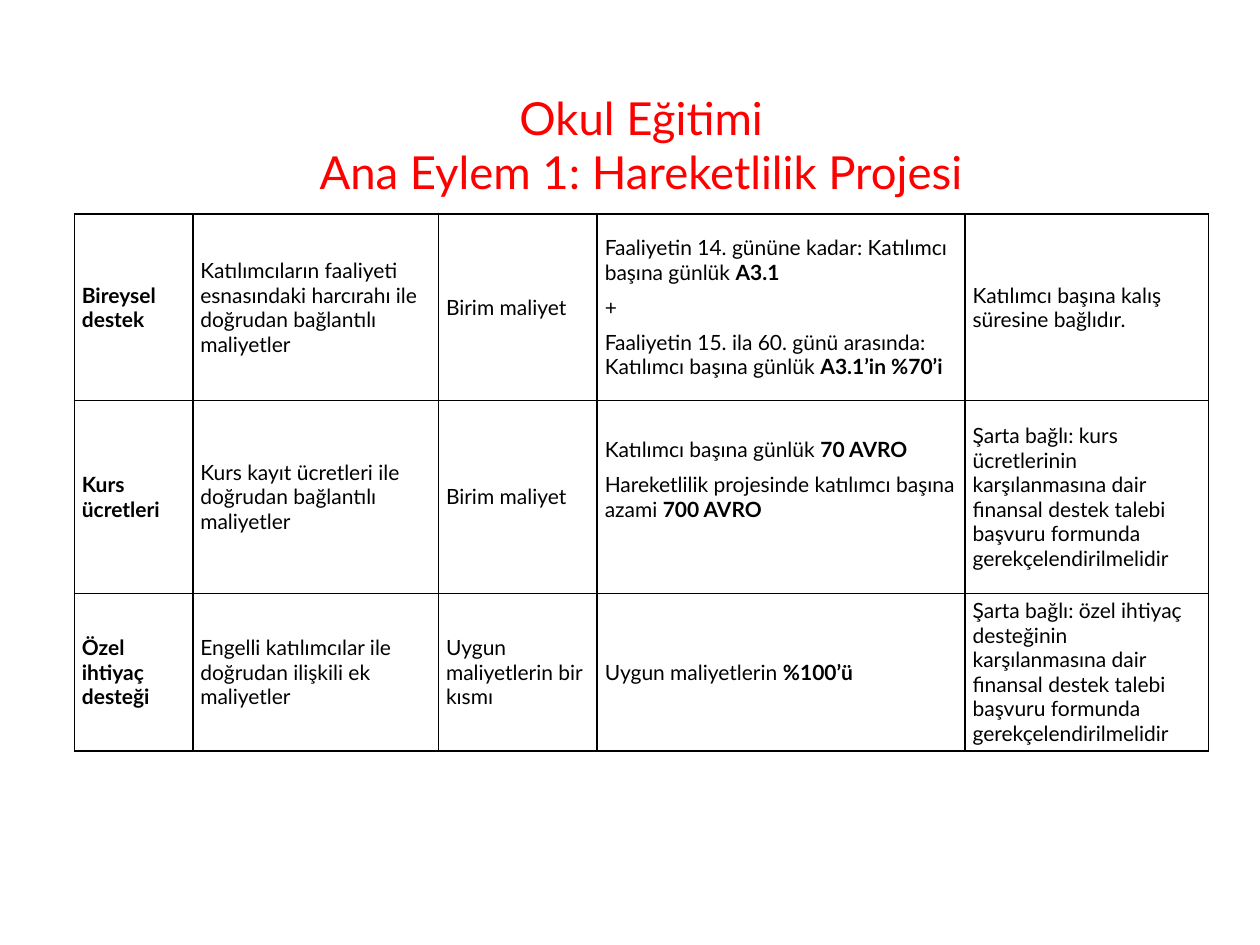
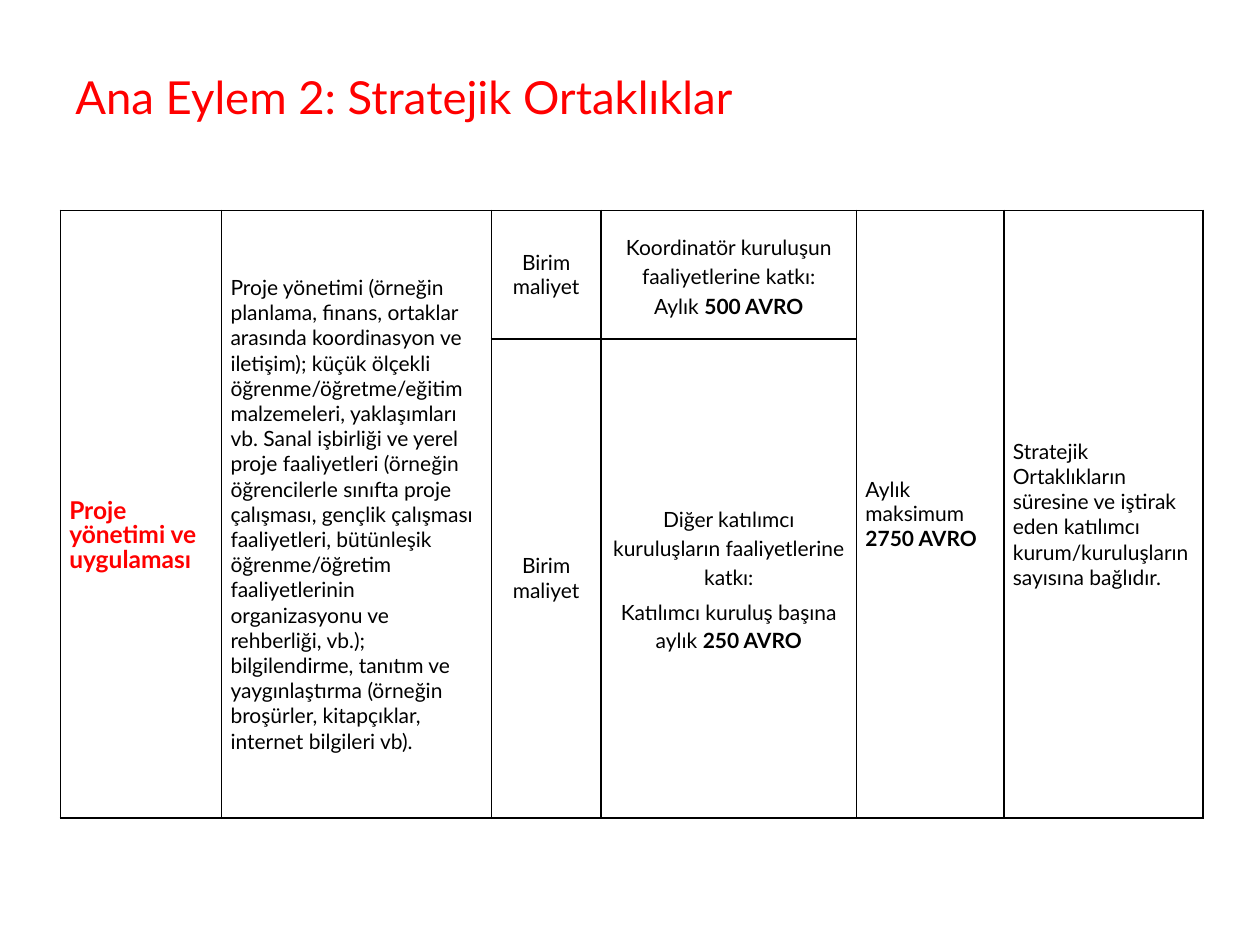
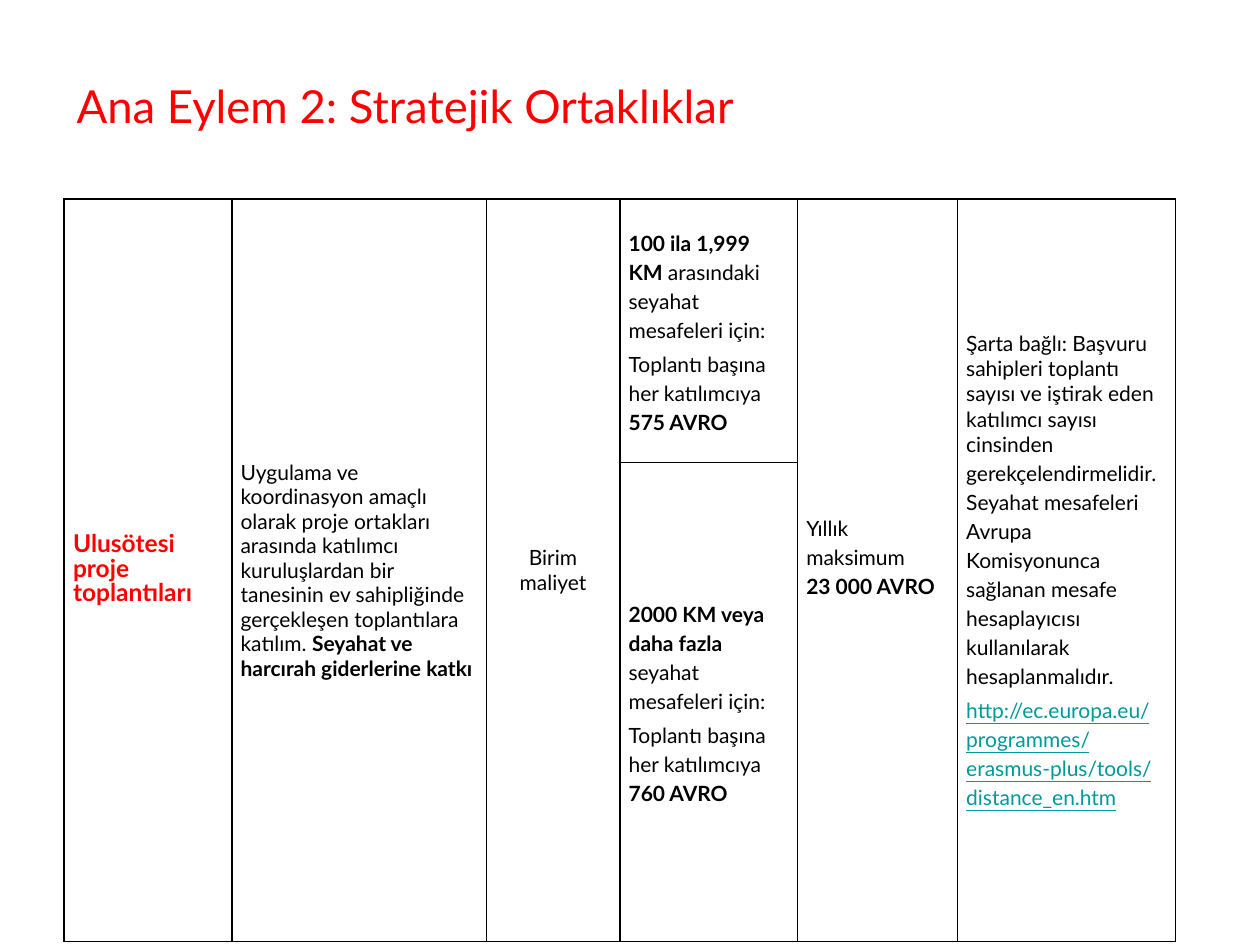
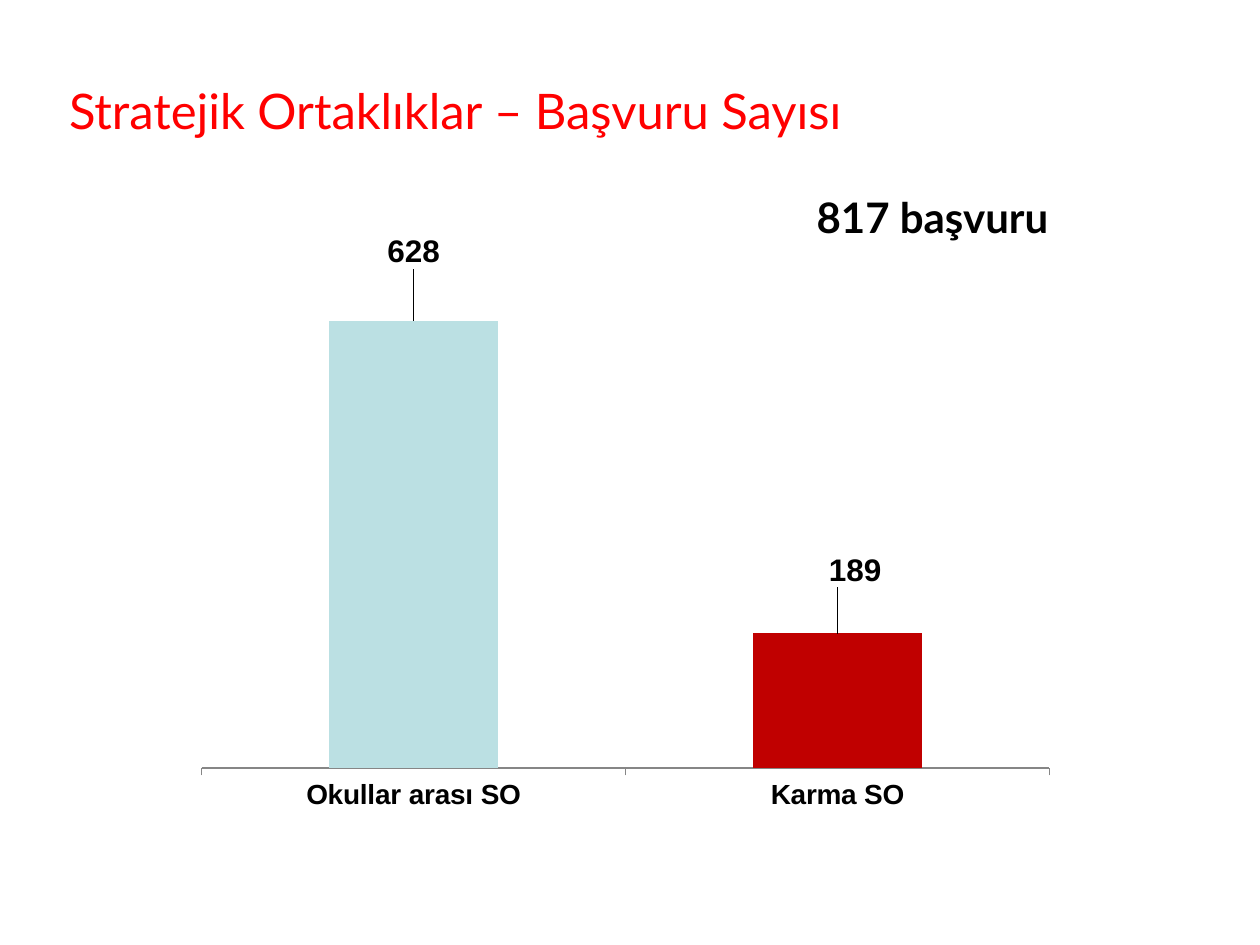
import pptx
import pptx.chart.data
import pptx.dml.color
import pptx.enum.chart
import pptx.enum.text
import pptx.oxml
import pptx.oxml.ns
import pptx.util
from dataclasses import dataclass
from typing import Any

Inches = pptx.util.Inches
Pt = pptx.util.Pt
RGB = pptx.dml.color.RGBColor
Align = pptx.enum.text.PP_ALIGN
Anchor = pptx.enum.text.MSO_ANCHOR
qn = pptx.oxml.ns.qn

# Shared look
RED = RGB(0xFF, 0x00, 0x00)
BLACK = RGB(0x00, 0x00, 0x00)
TEAL = RGB(0x00, 0x99, 0x99)
PALE = RGB(0xBB, 0xE0, 0xE3)
DARK = RGB(0xC0, 0x00, 0x00)
GRAY = RGB(0x86, 0x86, 0x86)
FONT = "Lato"
NB = chr(160)
EDGE = 1  # table line width in points
PARTNER = "Ana Eylem 2: Stratejik Ortaklıklar"


@dataclass
class Para:
    """A paragraph; the parts between asterisks are bold."""
    text: str
    space: Any = None
    after: float = 0
    align: Any = Align.LEFT
    size: float = 12
    color: Any = BLACK
    line: bool = False


@dataclass
class Cell:
    paras: list
    top: float = 0
    low: float = 0
    rows: int = 1


# Paragraph kinds
def brief(text):
    return Para(text, Pt(14), 6)


def tight(text, **more):
    return Para(text, Pt(14), 12, **more)


def loose(text, **more):
    return Para(text, 1.15, 3, **more)


def head(text):
    return tight(f"*{text}*", size=14, color=RED)


def unit():
    return tight("Birim maliyet", align=Align.CENTER)


def tall(*paras, **more):
    return Cell(list(paras), rows=2, **more)


# Text
def write(frame, paras):
    for num, item in enumerate(paras):
        para = frame.paragraphs[0] if num == 0 else frame.add_paragraph()
        para.alignment = item.align
        if item.space:
            para.line_spacing = item.space
        if item.after:
            para.space_after = Pt(item.after)
        for part, text in enumerate(item.text.split("*")):
            if not text:
                continue
            run = para.add_run()
            run.text = text
            font = run.font
            font.name = FONT
            font.size = Pt(item.size)
            font.bold = part % 2 == 1
            font.color.rgb = item.color
            if item.line:
                font.underline = True


def add_text(slide, at, paras, anchor=Anchor.TOP):
    box = slide.shapes.add_textbox(*map(Inches, at))
    frame = box.text_frame
    frame.word_wrap = True
    frame.vertical_anchor = anchor
    write(frame, paras)
    return frame


def add_title(slide, at, *lines, size=26, align=Align.LEFT):
    paras = [Para(line, size=size, color=RED, align=align) for line in lines]
    add_text(slide, at, paras, Anchor.MIDDLE)


# Tables
def add_edges(cell):
    props = cell._tc.get_or_add_tcPr()
    for side in ("lnL", "lnR", "lnT", "lnB"):
        props.append(pptx.oxml.parse_xml(
            f'<a:{side} xmlns:a="http://schemas.openxmlformats.org/drawingml/2006/main"'
            f' w="{Pt(EDGE)}"><a:solidFill><a:srgbClr val="{BLACK}"/></a:solidFill>'
            f'</a:{side}>'))


def add_grid(slide, left, top, cols, rows, cells, side):
    frame = slide.shapes.add_table(
        len(rows), len(cols), Inches(left), Inches(top),
        Inches(sum(cols)), Inches(sum(rows)))
    table = frame.table
    table.first_row = table.horz_banding = False
    for col, wide in zip(table.columns, cols):
        col.width = Inches(wide)
    for row, high in zip(table.rows, rows):
        row.height = Inches(high)
    for r, line in enumerate(cells):
        for c, item in enumerate(line):
            cell = table.cell(r, c)
            add_edges(cell)
            cell.fill.background()
            cell.vertical_anchor = Anchor.MIDDLE
            cell.margin_left = cell.margin_right = Inches(side)
            cell.margin_top = cell.margin_bottom = 0
            if item is None:
                continue
            cell.margin_top = Inches(item.top)
            cell.margin_bottom = Inches(item.low)
            write(cell.text_frame, item.paras)
            if item.rows > 1:
                cell.merge(table.cell(r + item.rows - 1, c))


# Chart
def layout(inner="", **pos):
    items = "".join(f'<c:{key} val="{val}"/>' for key, val in pos.items())
    return pptx.oxml.parse_xml(
        '<c:layout xmlns:c="http://schemas.openxmlformats.org/drawingml/2006/chart">'
        f'<c:manualLayout>{inner}{items}</c:manualLayout></c:layout>')


def add_bars(slide, at, names, vals, fills, shifts):
    data = pptx.chart.data.CategoryChartData()
    data.categories = names
    data.add_series("Series 1", vals)
    kind = pptx.enum.chart.XL_CHART_TYPE.COLUMN_CLUSTERED
    chart = slide.shapes.add_chart(kind, *map(Inches, at), data).chart
    chart.has_legend = chart.has_title = False
    chart.font.name = "Arial"
    chart.font.size = Pt(10)
    chart.font.color.rgb = BLACK

    # Axes
    axis = chart.category_axis
    axis.tick_labels.font.size = Pt(16)
    axis.tick_labels.font.bold = True
    axis.format.line.color.rgb = GRAY
    value = chart.value_axis
    value.visible = value.has_major_gridlines = False
    value.minimum_scale, value.maximum_scale = 0, 700

    # Bars and their labels
    plot = chart.plots[0]
    plot.gap_width = 150
    plot.vary_by_categories = False
    bars = plot.series[0]
    bars.format.fill.solid()
    bars.format.fill.fore_color.rgb = fills[0]
    for num, (fill, (dx, dy)) in enumerate(zip(fills, shifts)):
        point = bars.points[num]
        point.format.fill.solid()
        point.format.fill.fore_color.rgb = fill
        label = point.data_label
        label.font.size = Pt(18)
        label.font.bold = True
        label.position = pptx.enum.chart.XL_LABEL_POSITION.OUTSIDE_END
        node = bars._element.findall(".//" + qn("c:dLbl"))[num]
        node.insert(1, layout(x=dx, y=dy))

    # Plot area
    area = chart._chartSpace.find(".//" + qn("c:plotArea"))
    old = area.find(qn("c:layout"))
    if old is not None:
        area.remove(old)
    area.insert(0, layout('<c:layoutTarget val="inner"/>', xMode="edge",
                          yMode="edge", x=0.02, y=0.05, w=0.96, h=0.86))


# Slides
def add_school(slide):
    add_title(slide, (0.59, 0.52, 9, 1.25), "Okul Eğitimi",
              "Ana Eylem 1: Hareketlilik Projesi", align=Align.CENTER)
    need = ("Şarta bağlı: {} karşılanmasına dair finansal destek talebi "
            "başvuru formunda gerekçelendirilmelidir")
    texts = [
        [["*Bireysel destek*"],
         ["Katılımcıların faaliyeti esnasındaki harcırahı ile doğrudan "
          "bağlantılı maliyetler"],
         ["Birim maliyet"],
         ["Faaliyetin 14. gününe kadar: Katılımcı başına günlük *A3.1*", "+",
          "Faaliyetin 15. ila 60. günü arasında: Katılımcı başına günlük "
          "*A3.1’in %70’i*"],
         ["Katılımcı başına kalış süresine bağlıdır."]],
        [["*Kurs ücretleri*"],
         ["Kurs kayıt ücretleri ile doğrudan bağlantılı maliyetler"],
         ["Birim maliyet"],
         ["Katılımcı başına günlük *70 AVRO*",
          "Hareketlilik projesinde katılımcı başına azami *700 AVRO*"],
         [need.format("kurs ücretlerinin")]],
        [["*Özel ihtiyaç desteği*"],
         ["Engelli katılımcılar ile doğrudan ilişkili ek maliyetler"],
         ["Uygun maliyetlerin bir kısmı"],
         ["Uygun maliyetlerin *%100’ü*"],
         [need.format("özel ihtiyaç desteğinin")]],
    ]
    cells = [[Cell([brief(text) for text in item]) for item in row]
             for row in texts]
    cells[1][3].low = 0.28  # lifts the course fees
    add_grid(slide, 0.59, 1.7, [0.94, 1.95, 1.26, 2.92, 1.93],
             [1.48, 1.53, 1.25], cells, 0.06)


def add_project(slide):
    mid = Align.CENTER
    cells = [
        [tall(head("Proje yönetimi ve uygulaması"), top=0.36),
         tall(Para(
             "Proje yönetimi (örneğin planlama, finans, ortaklar arasında "
             "koordinasyon ve iletişim); küçük ölçekli öğrenme/öğretme/eğitim "
             "malzemeleri, yaklaşımları vb. Sanal işbirliği ve yerel proje "
             "faaliyetleri (örneğin öğrencilerle sınıfta proje çalışması, "
             "gençlik çalışması faaliyetleri, bütünleşik öğrenme/öğretim "
             "faaliyetlerinin organizasyonu ve rehberliği, vb.); "
             "bilgilendirme, tanıtım ve yaygınlaştırma (örneğin broşürler, "
             "kitapçıklar, internet bilgileri vb).")),
         Cell([unit()]),
         Cell([loose("Koordinatör kuruluşun faaliyetlerine katkı:", align=mid),
               tight("Aylık *500 AVRO*", align=mid)]),
         tall(tight(f"Aylık maksimum *2750{NB}AVRO*")),
         tall(Para("Stratejik Ortaklıkların süresine ve iştirak eden katılımcı "
                   "kurum/kuruluşların sayısına bağlıdır."))],
        [None, None, Cell([unit()]),
         Cell([loose("Diğer katılımcı kuruluşların faaliyetlerine katkı:",
                     align=mid),
               loose("Katılımcı kuruluş başına aylık *250 AVRO*", align=mid)]),
         None, None],
    ]
    add_grid(slide, 0.48, 1.67, [1.28, 2.14, 0.87, 2.03, 1.17, 1.58],
             [1.02, 2.92], cells, 0.07)
    add_title(slide, (0.5, 0.3, 9, 0.93), PARTNER)


def add_meeting(slide):
    def trip(reach, sum_):
        return Cell([loose(reach),
                     loose(f"Toplantı başına her katılımcıya *{sum_} AVRO*")])

    cells = [
        [tall(head("Ulusötesi proje toplantıları")),
         tall(tight(
             "Uygulama ve koordinasyon amaçlı olarak proje ortakları arasında "
             "katılımcı kuruluşlardan bir tanesinin ev sahipliğinde "
             "gerçekleşen toplantılara katılım. "
             "*Seyahat ve harcırah giderlerine katkı*")),
         tall(unit()),
         trip("*100 ila 1,999 KM *arasındaki seyahat mesafeleri için:", 575),
         tall(loose(f"Yıllık maksimum *23{NB}000{NB}AVRO*"), low=0.24),
         tall(Para("Şarta bağlı: Başvuru sahipleri toplantı sayısı ve iştirak "
                   "eden katılımcı sayısı cinsinden"),
              loose("gerekçelendirmelidir. Seyahat mesafeleri Avrupa "
                    "Komisyonunca sağlanan mesafe hesaplayıcısı kullanılarak "
                    "hesaplanmalıdır."),
              loose("http://ec.europa.eu/programmes/erasmus-plus/tools/"
                    "distance_en.htm", color=TEAL, line=True))],
        [None, None, None,
         trip("*2000 KM veya daha fazla *seyahat mesafeleri için:", 760),
         None, None],
    ]
    add_grid(slide, 0.51, 1.58, [1.33, 2.02, 1.06, 1.41, 1.27, 1.73],
             [2.09, 2], cells, 0.07)
    add_title(slide, (0.51, 0.21, 9, 1.25), PARTNER)


def add_count(slide):
    add_title(slide, (0.45, 0.44, 9, 0.87),
              "Stratejik Ortaklıklar – Başvuru Sayısı", size=28)
    add_bars(slide, (1.46, 1.86, 7.01, 4.65),
             ["Okullar arası SO", "Karma SO"], [628, 189], [PALE, DARK],
             [(0, -0.08), (0.02, -0.07)])
    frame = add_text(slide, (5.39, 1.47, 4.02, 0.5),
                     [Para("*817 başvuru*", size=24, align=Align.CENTER)])
    frame.auto_size = pptx.enum.text.MSO_AUTO_SIZE.SHAPE_TO_FIT_TEXT


def main():
    deck = pptx.Presentation()
    deck.slide_width = Inches(10)
    deck.slide_height = Inches(7.5)
    blank = deck.slide_layouts[6]
    for build in (add_school, add_project, add_meeting, add_count):
        build(deck.slides.add_slide(blank))
    deck.save("out.pptx")


if __name__ == "__main__":
    main()
